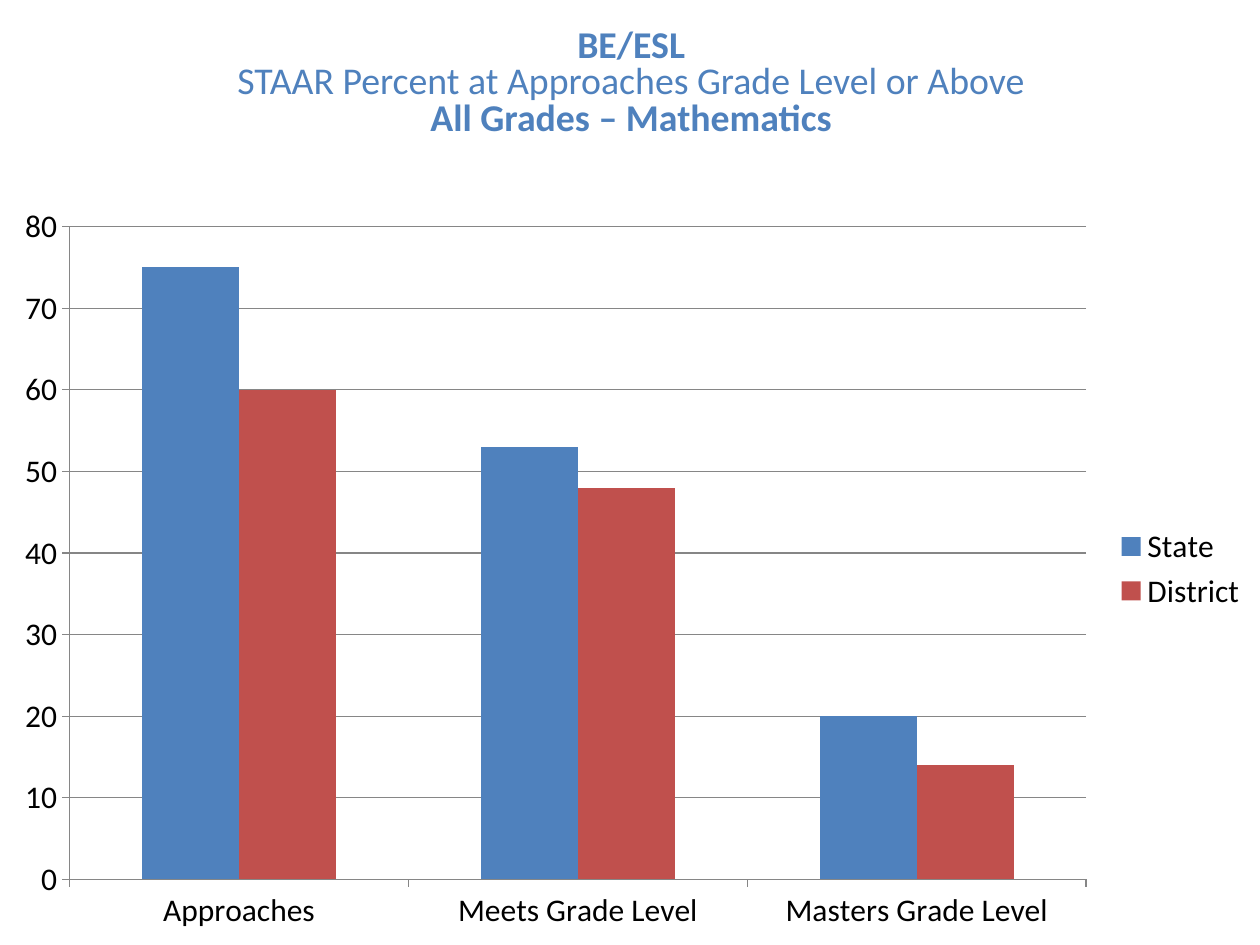
from pptx import Presentation
from pptx import util as u
from pptx.chart import data as chart_data
from pptx.dml import color
from pptx.enum import chart as ch, text

FONT = "Calibri"
BLUE, RED, BLACK, GRAY = "4F81BD", "C0504D", "000000", "868686"
WIDTH, HEIGHT = 720, 540
CHART_TOP = 110

# Content: heading lines as (wording, bold), series as (name, values, colour)
heading_lines = [
    ("BE/ESL", True),
    ("STAAR Percent at Approaches Grade Level or Above", False),
    ("All Grades – Mathematics", True),
]
levels = ["Approaches", "Meets Grade Level", "Masters Grade Level"]
groups = [
    ("State", (75, 53, 20), BLUE),
    ("District", (60, 48, 14), RED),
]


def rgb(code):
    return color.RGBColor.from_string(code)


def style_font(font, size, code, bold=False):
    font.name, font.size, font.bold = FONT, u.Pt(size), bold
    font.color.rgb = rgb(code)


def style_line(line):
    line.color.rgb = rgb(GRAY)
    line.width = u.Pt(0.75)


def add_scores(slide):
    scores = chart_data.CategoryChartData()
    scores.categories = levels
    for name, values, _ in groups:
        scores.add_series(name, values)
    chart = slide.shapes.add_chart(
        ch.XL_CHART_TYPE.COLUMN_CLUSTERED, u.Pt(0), u.Pt(CHART_TOP),
        u.Pt(WIDTH), u.Pt(HEIGHT - CHART_TOP), scores).chart
    style_font(chart.font, 18, BLACK)
    chart.has_title = False

    # Columns
    plot = chart.plots[0]
    plot.gap_width, plot.overlap = 150, 0
    plot.vary_by_categories = False
    for series, (_, _, fill) in zip(plot.series, groups):
        series.format.fill.solid()
        series.format.fill.fore_color.rgb = rgb(fill)

    # Axes and gridlines
    percent = chart.value_axis
    percent.minimum_scale, percent.maximum_scale, percent.major_unit = 0, 80, 10
    percent.has_major_gridlines = True
    style_line(percent.major_gridlines.format.line)
    for axis in (chart.category_axis, percent):
        axis.major_tick_mark = ch.XL_TICK_MARK.OUTSIDE
        style_line(axis.format.line)

    # Legend
    chart.has_legend = True
    chart.legend.position = ch.XL_LEGEND_POSITION.RIGHT
    chart.legend.include_in_layout = False


def add_heading(slide):
    frame = slide.shapes.add_textbox(
        u.Pt(0.72), u.Pt(12), u.Pt(WIDTH), u.Pt(72)).text_frame
    frame.word_wrap = True
    frame.vertical_anchor = text.MSO_ANCHOR.MIDDLE
    frame.text = "\n".join(wording for wording, _ in heading_lines)
    for paragraph, (_, bold) in zip(frame.paragraphs, heading_lines):
        paragraph.alignment = text.PP_ALIGN.CENTER
        paragraph.line_spacing = 0.8
        style_font(paragraph.runs[0].font, 21.6, BLUE, bold)


def main():
    deck = Presentation()
    deck.slide_width, deck.slide_height = u.Pt(WIDTH), u.Pt(HEIGHT)
    slide = deck.slides.add_slide(deck.slide_layouts[6])
    add_scores(slide)
    add_heading(slide)
    deck.save("out.pptx")


if __name__ == "__main__":
    main()
